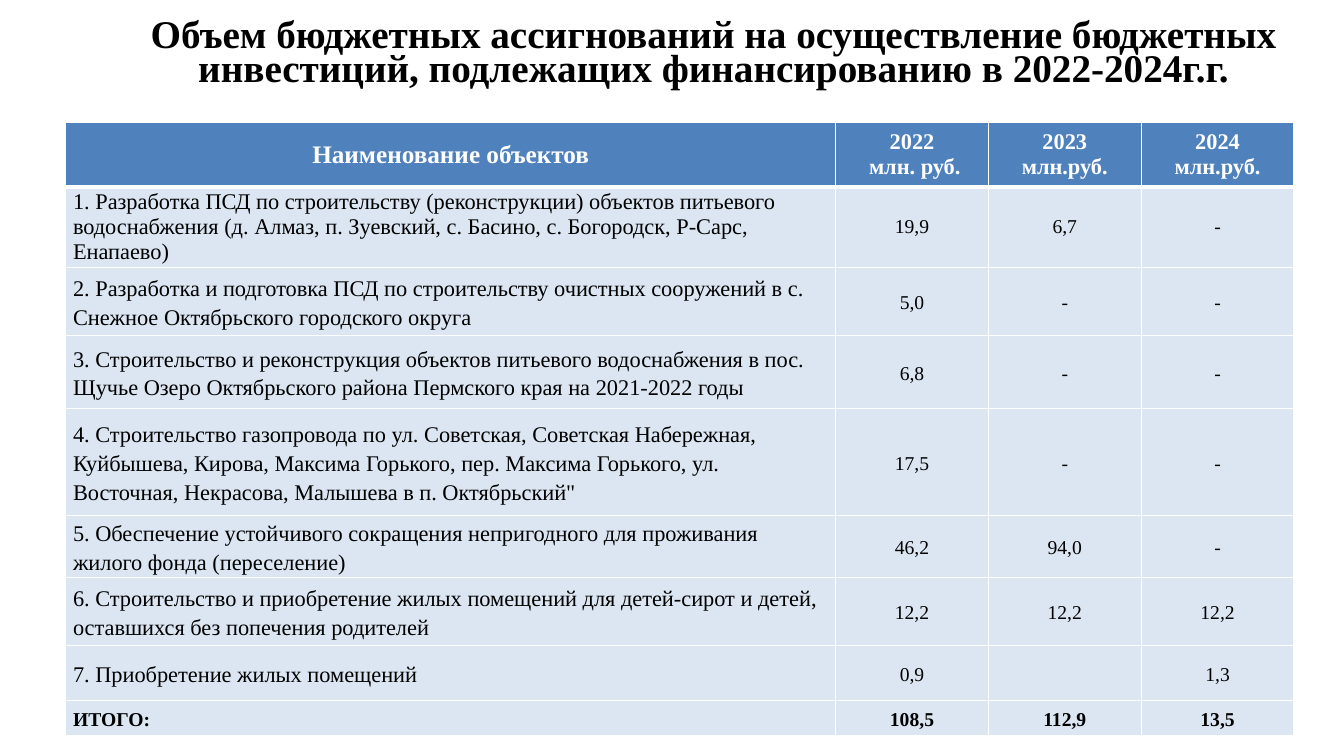
from dataclasses import dataclass

from lxml import etree
from pptx import Presentation
from pptx.dml.color import RGBColor
from pptx.enum.text import MSO_ANCHOR, PP_ALIGN
from pptx.oxml.ns import qn
from pptx.slide import Slide
from pptx.table import _Cell
from pptx.text.text import TextFrame
from pptx.util import Cm, Pt

MIDDLE = MSO_ANCHOR.MIDDLE
LEFT, CENTER = PP_ALIGN.LEFT, PP_ALIGN.CENTER


@dataclass(frozen=True)
class Theme:
    font: str = "Times New Roman"
    text: str = "000000"
    header_text: str = "FFFFFF"
    header_fill: str = "4F81BD"
    body_fill: str = "DCE6F2"
    border: str = "FFFFFF"
    title_size: int = 28
    header_size: int = 18
    name_size: int = 16
    value_size: int = 14
    thin: int = 1
    thick: int = 3


@dataclass(frozen=True)
class TextStyle:
    size: int
    color: str
    bold: bool = False
    align: PP_ALIGN = CENTER
    spacing: float | Pt = 1.0


@dataclass(frozen=True)
class BudgetRow:
    height: float
    name: str
    values: tuple[str, str, str]
    spacing: float = 1.15
    total: bool = False


THEME = Theme()
TITLE = ("Объем бюджетных ассигнований на осуществление бюджетных инвестиций, "
         "подлежащих финансированию в 2022-2024г.г.")
HEADER = BudgetRow(1.54, "Наименование объектов",
                   ("2022\n млн. руб.", "2023\nмлн.руб.", "2024\nмлн.руб."))
ROWS = (
    BudgetRow(1.96, "1. Разработка ПСД по строительству (реконструкции) объектов питьевого "
              "водоснабжения (д. Алмаз, п. Зуевский, с. Басино, с. Богородск, Р-Сарс, Енапаево)",
              ("19,9", "6,7", "-"), spacing=1.0),
    BudgetRow(1.72, "2. Разработка и подготовка ПСД по строительству очистных сооружений в с. "
              "Снежное Октябрьского городского округа", ("5,0", "-", "-")),
    BudgetRow(1.84, "3. Строительство и реконструкция объектов питьевого водоснабжения в пос. "
              "Щучье Озеро Октябрьского района Пермского края на 2021-2022 годы",
              ("6,8", "-", "-")),
    BudgetRow(2.69, "4. Строительство газопровода по ул. Советская, Советская Набережная, "
              "Куйбышева, Кирова, Максима Горького, пер. Максима Горького, ул. Восточная, "
              "Некрасова, Малышева в п. Октябрьский\"", ("17,5", "-", "-")),
    BudgetRow(1.46, "5. Обеспечение устойчивого сокращения непригодного для проживания "
              "жилого фонда (переселение)", ("46,2", "94,0", "-")),
    BudgetRow(1.72, "6. Строительство и приобретение жилых помещений для детей-сирот и детей, "
              "оставшихся без попечения родителей", ("12,2", "12,2", "12,2")),
    BudgetRow(1.39, "7. Приобретение жилых помещений", ("0,9", "", "1,3")),
    BudgetRow(0.89, "ИТОГО:", ("108,5", "112,9", "13,5"), total=True),
)
COLUMN_WIDTHS = (19.4, 3.85, 3.85, 3.85)


def write_text(frame: TextFrame, text: str, style: TextStyle) -> None:
    frame.text = text
    for para in frame.paragraphs:
        para.alignment = style.align
        para.line_spacing = style.spacing
        for span in para.runs:
            span.font.name = THEME.font
            span.font.size = Pt(style.size)
            span.font.bold = style.bold
            span.font.color.rgb = RGBColor.from_string(style.color)


def add_borders(cell: _Cell, top: int, bottom: int) -> None:
    properties = cell._tc.get_or_add_tcPr()
    widths = {"a:lnL": THEME.thin, "a:lnR": THEME.thin, "a:lnT": top, "a:lnB": bottom}
    for tag, width in widths.items():
        line = etree.SubElement(properties, qn(tag), w=str(Pt(width)))
        fill = etree.SubElement(line, qn("a:solidFill"))
        etree.SubElement(fill, qn("a:srgbClr"), val=THEME.border)


def fill_cell(cell: _Cell, text: str, style: TextStyle, row_index: int) -> None:
    is_header = row_index == 0
    add_borders(cell,
                top=THEME.thick if row_index == 1 else THEME.thin,
                bottom=THEME.thick if is_header else THEME.thin)
    cell.fill.solid()
    cell.fill.fore_color.rgb = RGBColor.from_string(
        THEME.header_fill if is_header else THEME.body_fill)
    cell.vertical_anchor = MIDDLE
    cell.margin_left = cell.margin_right = Cm(0.33 if is_header else 0.18)
    cell.margin_top = cell.margin_bottom = Cm(0.13 if is_header else 0)
    write_text(cell.text_frame, text, style)


def add_title(page: Slide) -> None:
    box = page.shapes.add_textbox(Cm(2.74), Cm(0.23), Cm(30.48), Cm(2.39))
    box.text_frame.word_wrap = True
    box.text_frame.vertical_anchor = MIDDLE
    write_text(box.text_frame, TITLE,
               TextStyle(THEME.title_size, THEME.text, bold=True, spacing=Pt(24)))


def row_styles(row: BudgetRow) -> tuple[TextStyle, TextStyle]:
    if row is HEADER:
        return (TextStyle(THEME.header_size, THEME.header_text, bold=True),
                TextStyle(THEME.name_size, THEME.header_text, bold=True))
    name_size = THEME.value_size if row.total else THEME.name_size
    return (TextStyle(name_size, THEME.text, row.total, LEFT, row.spacing),
            TextStyle(THEME.value_size, THEME.text, row.total, CENTER, row.spacing))


def add_budget_table(page: Slide) -> None:
    rows = (HEADER, *ROWS)
    table = page.shapes.add_table(
        len(rows), len(COLUMN_WIDTHS), Cm(1.66), Cm(3.09),
        Cm(sum(COLUMN_WIDTHS)), Cm(sum(row.height for row in rows))).table
    for column, width in zip(table.columns, COLUMN_WIDTHS):
        column.width = Cm(width)
    for row_index, row in enumerate(rows):
        table.rows[row_index].height = Cm(row.height)
        name_style, value_style = row_styles(row)
        fill_cell(table.cell(row_index, 0), row.name, name_style, row_index)
        for column_index, value in enumerate(row.values, start=1):
            fill_cell(table.cell(row_index, column_index), value, value_style, row_index)


def main() -> None:
    deck = Presentation()
    deck.slide_width, deck.slide_height = Cm(33.87), Cm(19.05)
    page = deck.slides.add_slide(deck.slide_layouts[6])
    add_title(page)
    add_budget_table(page)
    deck.save("out.pptx")


if __name__ == "__main__":
    main()
